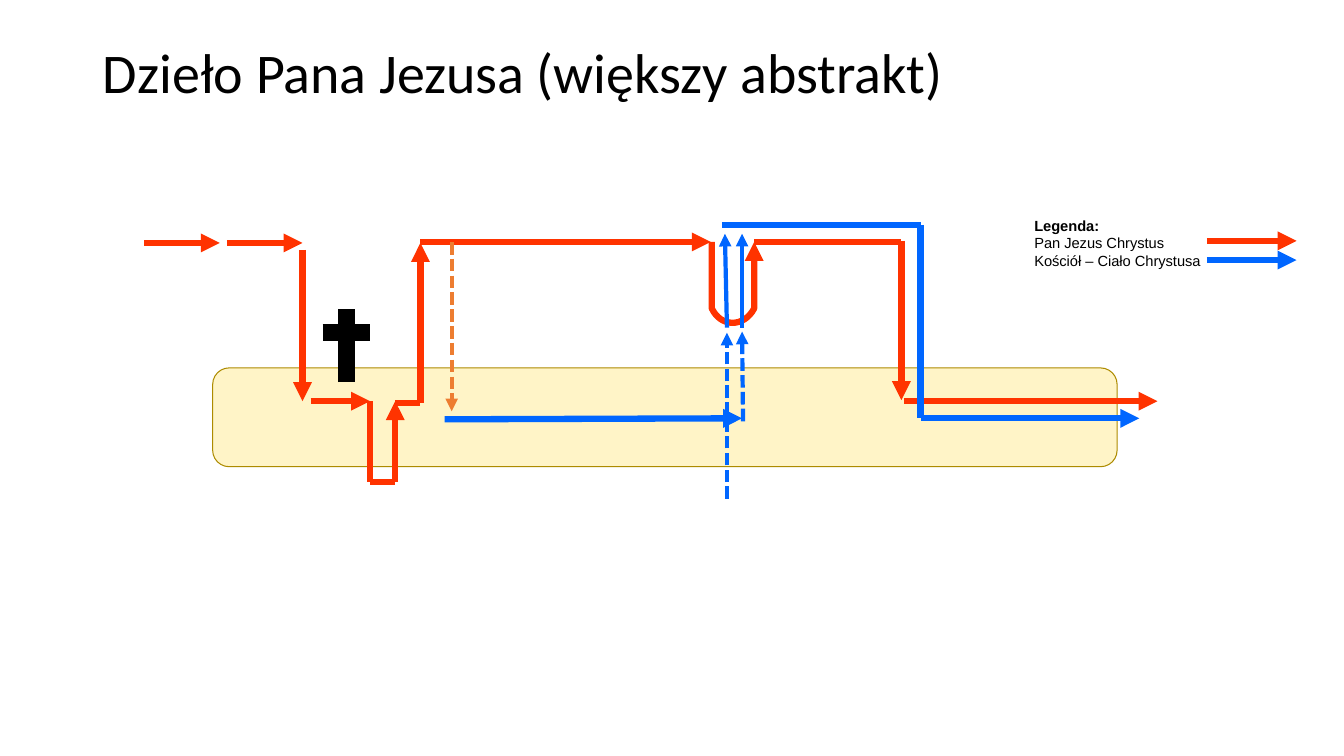
from lxml.etree import SubElement
from pptx import Presentation
from pptx.dml.color import RGBColor
from pptx.enum.dml import MSO_LINE
from pptx.enum.shapes import MSO_CONNECTOR, MSO_SHAPE
from pptx.enum.text import MSO_ANCHOR, MSO_AUTO_SIZE, PP_ALIGN
from pptx.oxml.ns import qn
from pptx.util import Inches, Pt

COLORS = {
    "red": "FF3300",
    "blue": "0066FF",
    "orange": "ED7D31",
    "band": "FFF4C7",
    "band_edge": "AD8B00",
    "black": "000000",
}


def rgb(name):
    return RGBColor.from_string(COLORS[name])


def style_line(sp, color, width, arrow=False, dashed=False):
    sp.line.color.rgb = rgb(color)
    sp.line.width = Pt(width)
    if dashed:
        sp.line.dash_style = MSO_LINE.SQUARE_DOT
    if arrow:
        SubElement(sp.line._get_or_add_ln(), qn("a:tailEnd"), type="triangle")


def add_line(s, box, start, end, color, width=4.5, arrow=True, dashed=False):
    x, y = box[:2]
    sp = s.shapes.add_connector(
        MSO_CONNECTOR.STRAIGHT,
        Inches(x + start[0]), Inches(y + start[1]),
        Inches(x + end[0]), Inches(y + end[1]))
    SubElement(sp._element.spPr, qn("a:effectLst"))
    style_line(sp, color, width, arrow, dashed)


def add_run(p, text, size, font, bold=False):
    r = p.add_run()
    r.text = text
    r.font.size = Pt(size)
    r.font.name = font
    r.font.bold = bold
    r.font.color.rgb = rgb("black")


def add_title(s, box, text):
    sp = s.shapes.title
    sp.left, sp.top, sp.width, sp.height = map(Inches, box)
    tf = sp.text_frame
    tf.auto_size = MSO_AUTO_SIZE.NONE
    tf.vertical_anchor = MSO_ANCHOR.TOP
    p = tf.paragraphs[0]
    p.alignment = PP_ALIGN.LEFT
    p.line_spacing = 0.9
    add_run(p, text, 40, "Calibri")


def add_band(s, box):
    sp = s.shapes.add_shape(MSO_SHAPE.ROUNDED_RECTANGLE, *map(Inches, box))
    sp.shadow.inherit = False
    sp.fill.solid()
    sp.fill.fore_color.rgb = rgb("band")
    style_line(sp, "band_edge", 0.75)


def add_u_turn(s, box):
    x, y, w, h = box
    turn = y + h - 0.19
    points = [(x, turn), (x + 0.09, y + h), (x + w - 0.1, y + h),
              (x + w, turn), (x + w, y)]
    fb = s.shapes.build_freeform(Inches(x), Inches(y))
    fb.add_line_segments([(Inches(a), Inches(b)) for a, b in points], close=False)
    sp = fb.convert_to_shape()
    # Merge the three bottom segments into one Bezier curve
    control_1, control_2, end = sp._element.findall(".//" + qn("a:lnTo"))[1:4]
    control_1.tag = qn("a:cubicBezTo")
    for segment in (control_2, end):
        control_1.append(segment[0])
        segment.getparent().remove(segment)
    sp.shadow.inherit = False
    sp.fill.background()
    style_line(sp, "red", 4.5, arrow=True)


def add_red_path(s, box):
    upper, middle, lower = 0.4, 1.98, 2.78
    # Arrows
    for start, end in [
        ((0.43, 0.41), (1.18, 0.41)),
        ((1.25, 0.41), (2, 0.41)),
        ((2, 0.48), (2, middle)),
        ((2.08, middle), (2.67, middle)),
        ((2.92, lower), (2.92, middle)),
        ((3.17, 2), (3.17, 0.41)),
        ((3.17, upper), (6.05, upper)),
        ((7.94, 0.39), (7.94, 1.97)),
        ((7.97, middle), (10.48, middle)),
    ]:
        add_line(s, box, start, end, "red")
    # Plain links between the arrows
    for start, end in [
        ((2.67, middle), (2.67, lower)),
        ((2.67, lower), (2.92, lower)),
        ((2.92, 2), (3.17, 2)),
        ((6.48, upper), (7.94, upper)),
    ]:
        add_line(s, box, start, end, "red", arrow=False)
    add_u_turn(s, (box[0] + 6.06, box[1] + upper, 0.42, 0.85))


def add_blue_path(s, box):
    upper, lower, corner = 0.23, 2.15, 8.13
    add_line(s, box, (6.16, upper), (corner, upper), "blue", arrow=False)
    add_line(s, box, (corner, upper), (corner, lower), "blue", arrow=False)
    add_line(s, box, (corner, lower), (10.3, lower), "blue")
    # Thin upward arrows
    for start, end, dashed in [
        ((6.37, 2.18), (6.36, 1.29), True),
        ((6.21, 2.95), (6.21, 1.3), True),
        ((6.36, 1.25), (6.36, 0.32), False),
        ((6.21, 1.25), (6.19, 0.32), False),
    ]:
        add_line(s, box, start, end, "blue", 3, dashed=dashed)
    add_line(s, box, (3.41, 2.16), (6.36, lower), "blue")


def add_cross(s, box):
    w, h = box[2:]
    add_line(s, box, (0, 0.23), (w, 0.23), "black", 12, arrow=False)
    add_line(s, box, (w / 2, h), (w / 2, 0), "black", 12, arrow=False)


def add_legend(s, box):
    x, y, w, h = box
    sp = s.shapes.add_textbox(Inches(x), Inches(y), Inches(1.99), Inches(h))
    tf = sp.text_frame
    tf.word_wrap = True
    labels = ["Legenda:", "Pan Jezus Chrystus", "Kościół – Ciało Chrystusa"]
    for i, label in enumerate(labels):
        p = tf.add_paragraph() if i else tf.paragraphs[0]
        add_run(p, label, 10.5, "Arial", bold=i == 0)
    for i, color in enumerate(["red", "blue"]):
        row = 0.29 + 0.19 * i
        add_line(s, box, (w - 0.89, row), (w, row), color)


def main():
    prs = Presentation()
    prs.slide_width, prs.slide_height = Inches(13.33), Inches(7.5)
    s = prs.slides.add_slide(prs.slide_layouts[5])
    diagram = (1, 2, 10.5, 3)

    add_band(s, (2.11, 3.65, 8.97, 0.98))
    add_title(s, (0.92, 0.4, 11.5, 0.78), "Dzieło Pana Jezusa (większy abstrakt)")
    add_red_path(s, diagram)
    add_blue_path(s, diagram)
    add_cross(s, (3.2, 3.07, 0.47, 0.72))
    add_legend(s, (10.16, 2.1, 2.7, 0.63))
    # Dashed orange arrow
    add_line(s, diagram, (3.48, 0.4), (3.48, 2.08), "orange", 3, dashed=True)
    prs.save("out.pptx")


if __name__ == "__main__":
    main()
